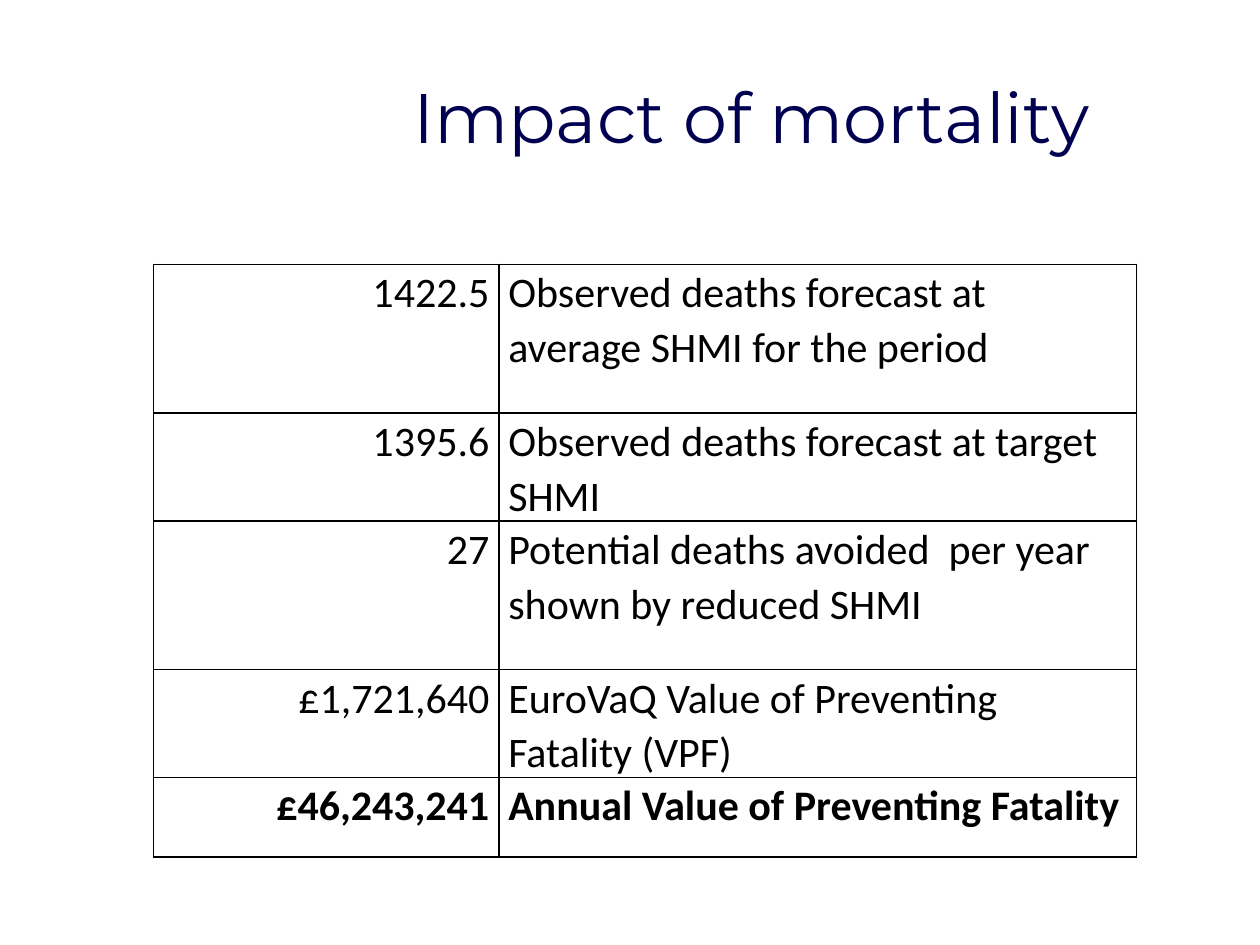
from pptx import Presentation
from pptx.dml.color import RGBColor
from pptx.enum.text import MSO_ANCHOR, PP_ALIGN
from pptx.oxml import parse_xml
from pptx.oxml.ns import nsdecls
from pptx.util import Pt

LEFT, CENTER, RIGHT = PP_ALIGN.LEFT, PP_ALIGN.CENTER, PP_ALIGN.RIGHT
TOP, MIDDLE = MSO_ANCHOR.TOP, MSO_ANCHOR.MIDDLE
NAVY, BLACK = "000050", "000000"


def color(code):
    return RGBColor.from_string(code)


class Deck:
    head_font, body_font = "Montserrat", "Calibri"
    head_size, body_size = 40, 24
    spacing, pad, border = 1.07, 5.4, 1

    def __init__(self, width, height):
        self.show = Presentation()
        self.show.slide_width, self.show.slide_height = Pt(width), Pt(height)
        self.slide = self.show.slides.add_slide(self.show.slide_layouts[6])

    def style(self, para, name, size, code, align, bold=False):
        para.alignment = align
        for run in para.runs:
            font = run.font
            font.name, font.size, font.bold = name, Pt(size), bold
            font.color.rgb = color(code)

    def title(self, text, left, top, width, height):
        box = self.slide.shapes.add_textbox(
            Pt(left), Pt(top), Pt(width), Pt(height))
        frame = box.text_frame
        frame.word_wrap = True
        frame.vertical_anchor = MIDDLE
        frame.text = text
        self.style(frame.paragraphs[0], self.head_font, self.head_size,
                   NAVY, CENTER)

    def edges(self, cell):
        props = cell._tc.get_or_add_tcPr()
        for spot, side in enumerate(("lnL", "lnR", "lnT", "lnB")):
            props.insert(spot, parse_xml(
                f'<a:{side} {nsdecls("a")} w="{Pt(self.border)}">'
                f'<a:solidFill><a:srgbClr val="{BLACK}"/></a:solidFill>'
                f'</a:{side}>'))

    def cell(self, cell, text, align, bold):
        cell.fill.background()
        cell.margin_left = cell.margin_right = Pt(self.pad)
        cell.margin_top = cell.margin_bottom = Pt(0)
        cell.vertical_anchor = TOP
        cell.text_frame.text = text
        para = cell.text_frame.paragraphs[0]
        para.line_spacing = self.spacing
        self.style(para, self.body_font, self.body_size, BLACK, align, bold)
        self.edges(cell)

    def table(self, rows, left, top, widths, heights):
        frame = self.slide.shapes.add_table(
            len(rows), len(widths), Pt(left), Pt(top),
            Pt(sum(widths)), Pt(sum(heights)))
        grid = frame.table
        grid.first_row = grid.horz_banding = False
        for col, width in zip(grid.columns, widths):
            col.width = Pt(width)
        for row, height, texts in zip(grid.rows, heights, rows):
            row.height = Pt(height)
            bold = texts is rows[-1]
            for cell, text, align in zip(row.cells, texts, (RIGHT, LEFT)):
                self.cell(cell, text, align, bold)


def main():
    deck = Deck(720, 540)

    # Title
    deck.title("Impact of mortality", 139, 21, 581, 90)

    # Deaths and their value; the last row is the total
    rows = [
        ("1422.5", "Observed deaths forecast at average SHMI for the period"),
        ("1395.6", "Observed deaths forecast at target SHMI"),
        ("27", "Potential deaths avoided  per year shown by reduced SHMI"),
        ("£1,721,640", "EuroVaQ Value of Preventing Fatality (VPF)"),
        ("£46,243,241", "Annual Value of Preventing Fatality"),
    ]
    tall, short = 85, 45.5
    deck.table(rows, 87.8, 151, (197.3, 364.3),
               (tall, short, tall, short, short))

    deck.show.save("out.pptx")


if __name__ == "__main__":
    main()
